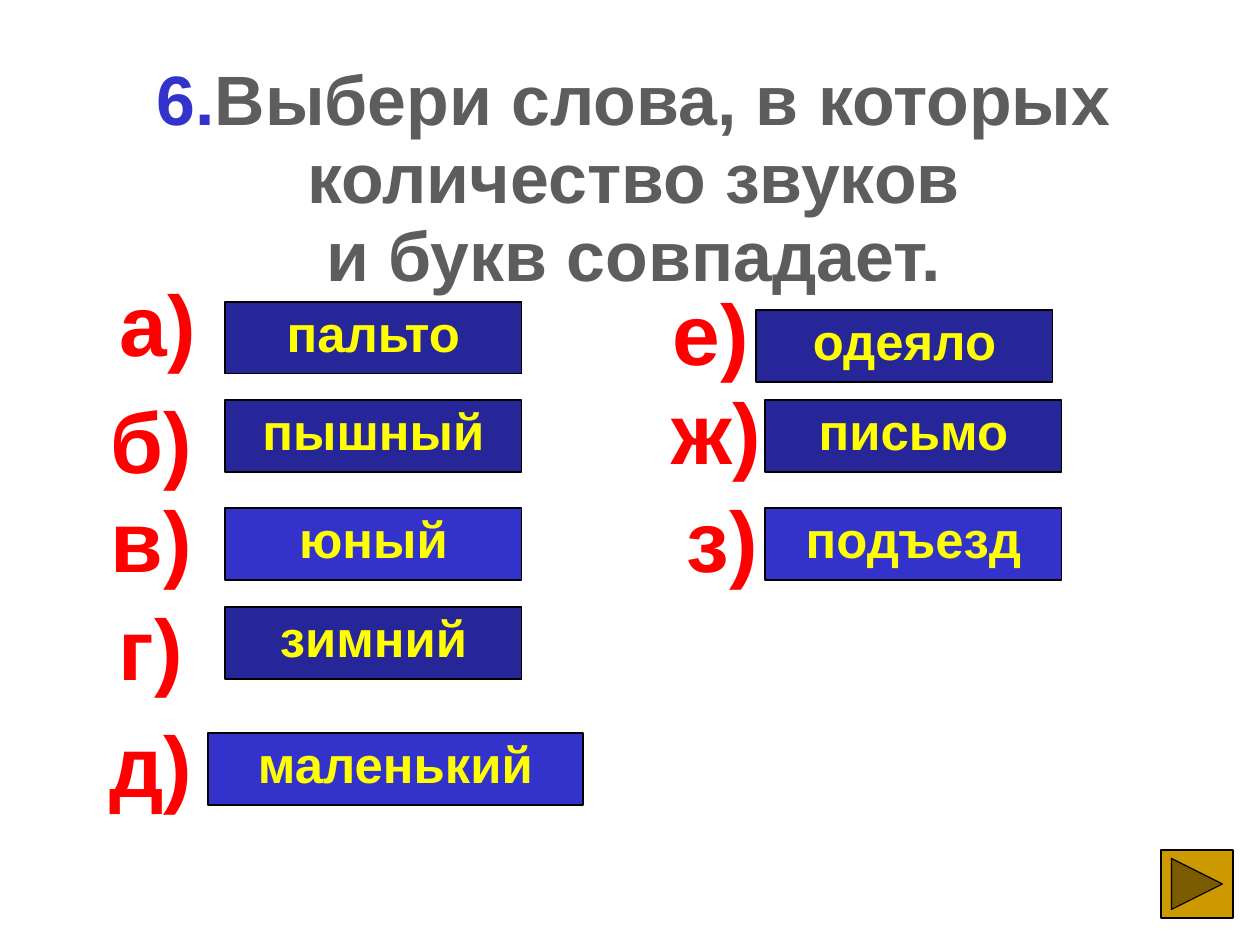
from pptx import Presentation
from pptx import util as u
from pptx.dml.color import RGBColor
from pptx.enum import shapes, text

PX = 8000  # EMU in one px of the 1260 by 945 px slide
NAVY, BLUE, RED, YELLOW = "262699", "3333CC", "FF0000", "FFFF00"
GREY, GOLD, BLACK = "5D5D5D", "CC9900", "000000"
WORD_W, WORD_H = 297, 72
LABEL_H = 109

# label, label box (left, top, width), word, word box (left, top, width), fill
ANSWERS = [
    ("а)", (107, 274, 101), "пальто", (225, 302, WORD_W), NAVY),
    ("б)", (99, 391, 105), "пышный", (225, 400, WORD_W), NAVY),
    ("в)", (99, 490, 105), "юный", (225, 508, WORD_W), BLUE),
    ("г)", (107, 598, 88), "зимний", (225, 607, WORD_W), NAVY),
    ("д)", (98, 715, 106), "маленький", (208, 733, 375), BLUE),
    ("е)", (660, 283, 101), "одеяло", (756, 310, WORD_W), NAVY),
    ("ж)", (660, 382, 113), "письмо", (765, 400, WORD_W), NAVY),
    ("з)", (675, 490, 95), "подъезд", (765, 508, WORD_W), BLUE),
]


def color(value):
    return RGBColor.from_string(value)


def emu(*lengths):
    return [n * PX for n in lengths]


def style(r, size, ink):
    r.font.name = "Arial"
    r.font.size = u.Pt(size)
    r.font.bold = True
    r.font.color.rgb = color(ink)


def write(tf, lines, size, ink):
    """Fill a text frame with centred bold lines."""
    tf.text = "\n".join(lines)
    for p in tf.paragraphs:
        p.alignment = text.PP_ALIGN.CENTER
        p.line_spacing = 0.93
        for r in p.runs:
            style(r, size, ink)


def add_box(s, kind, box, fill):
    sp = s.shapes.add_shape(kind, *emu(*box))
    sp.shadow.inherit = False
    sp.fill.solid()
    sp.fill.fore_color.rgb = color(fill)
    sp.line.color.rgb = color(BLACK)
    sp.line.width = u.Pt(0.75)
    return sp


def add_text(s, box, lines, size, ink):
    tf = s.shapes.add_textbox(*emu(*box)).text_frame
    tf.word_wrap = False
    tf.auto_size = text.MSO_AUTO_SIZE.SHAPE_TO_FIT_TEXT
    write(tf, lines, size, ink)
    return tf


def add_title(s, box):
    lines = ["Выбери слова, в которых", "количество звуков", "и букв совпадает."]
    tf = add_text(s, box, lines, 44, GREY)
    p = tf.paragraphs[0]
    p.runs[0].text = "6."
    style(p.runs[0], 44, BLUE)
    r = p.add_run()
    r.text = lines[0]
    style(r, 44, GREY)


def add_answer(s, label, label_box, word, word_box, fill):
    add_text(s, (*label_box, LABEL_H), [label], 54, RED)
    sp = add_box(s, shapes.MSO_SHAPE.RECTANGLE, (*word_box, WORD_H), fill)
    sp.text_frame.vertical_anchor = text.MSO_ANCHOR.TOP
    write(sp.text_frame, [word], 32, YELLOW)


def main():
    prs = Presentation()
    prs.slide_width, prs.slide_height = emu(1260, 945)
    s = prs.slides.add_slide(prs.slide_layouts[6])
    add_title(s, (140, 58, 988, 248))
    for answer in ANSWERS:
        add_answer(s, *answer)
    add_box(s, shapes.MSO_SHAPE.ACTION_BUTTON_FORWARD_OR_NEXT, (1161, 850, 72, 68), GOLD)
    prs.save("out.pptx")


if __name__ == "__main__":
    main()
